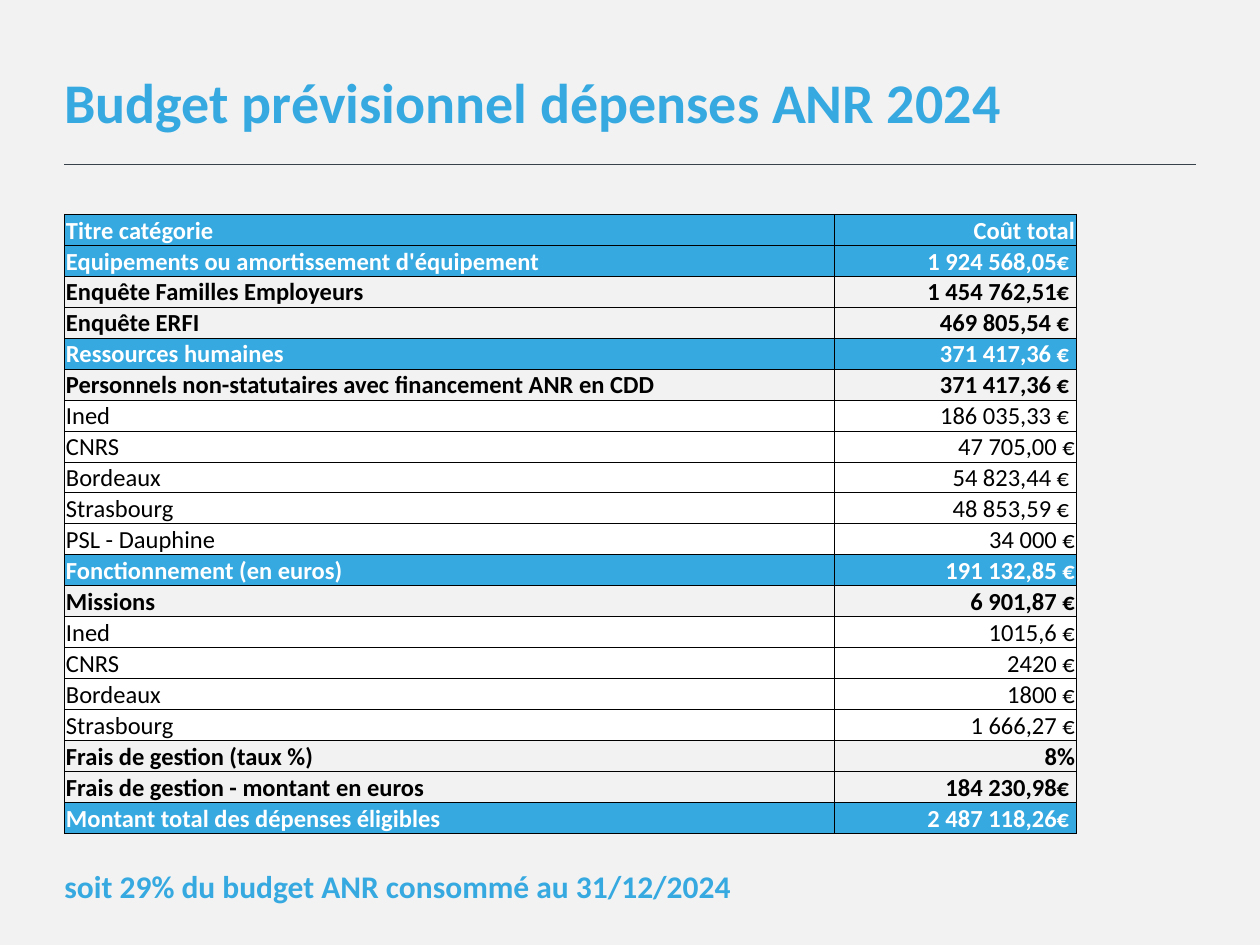
from lxml.etree import SubElement
from pptx import Presentation
from pptx.dml.color import RGBColor
from pptx.enum.shapes import MSO_CONNECTOR as Connector
from pptx.enum.text import MSO_ANCHOR as Anchor, PP_ALIGN as Align
from pptx.oxml.ns import qn
from pptx.util import Cm, Pt

COLORS = {
    "accent": "36A9E1",
    "background": "F2F2F2",
    "white": "FFFFFF",
    "black": "000000",
    "rule": "37424A",
}

LEVELS = {
    "section": {"fill": "accent", "color": "white", "bold": True},
    "subtotal": {"fill": "background", "color": "black", "bold": True},
    "detail": {"fill": "white", "color": "black", "bold": False},
}

EXPENSES = [
    ("section", "Titre catégorie", "Coût total"),
    ("section", "Equipements ou amortissement d'équipement", "1 924 568,05€ "),
    ("subtotal", "Enquête Familles Employeurs", "1 454 762,51€ "),
    ("subtotal", "Enquête ERFI", "469 805,54 € "),
    ("section", "Ressources humaines", "371 417,36 € "),
    ("subtotal", "Personnels non-statutaires avec financement ANR en CDD", "371 417,36 € "),
    ("detail", "Ined", "186 035,33 € "),
    ("detail", "CNRS", "47 705,00 €"),
    ("detail", "Bordeaux", "54 823,44 € "),
    ("detail", "Strasbourg", "48 853,59 € "),
    ("detail", "PSL - Dauphine", "34 000 €"),
    ("section", "Fonctionnement (en euros)", "191 132,85 €"),
    ("subtotal", "Missions", "6 901,87 €"),
    ("detail", "Ined", "1015,6 €"),
    ("detail", "CNRS", "2420 €"),
    ("detail", "Bordeaux", "1800 €"),
    ("detail", "Strasbourg", "1 666,27 €"),
    ("subtotal", "Frais de gestion (taux %)", "8%"),
    ("subtotal", "Frais de gestion - montant en euros", "184 230,98€ "),
    ("section", "Montant total des dépenses éligibles", "2 487 118,26€ "),
]


def rgb(name):
    """Return the named palette colour."""
    return RGBColor.from_string(COLORS[name])


def write_text(frame, text, size=14, color="black", bold=False, align=Align.LEFT):
    """Write one formatted paragraph into a text frame."""
    paragraph = frame.paragraphs[0]
    paragraph.alignment = align
    run = paragraph.add_run()
    run.text = text
    run.font.name = "Calibri"
    run.font.size = Pt(size)
    run.font.bold = bold
    run.font.color.rgb = rgb(color)


def add_heading(slide, text, left, top, width, height, size):
    """Place a bold accent line of text in the given box."""
    heading = slide.shapes.add_textbox(Cm(left), Cm(top), Cm(width), Cm(height))
    frame = heading.text_frame
    frame.word_wrap = True
    frame.vertical_anchor = Anchor.MIDDLE
    frame.margin_left = 0
    write_text(frame, text, size=size, color="accent", bold=True)


def add_rule(slide, left, top, width):
    """Draw the thin line under the title."""
    rule = slide.shapes.add_connector(
        Connector.STRAIGHT, Cm(left), Cm(top), Cm(left + width), Cm(top)
    )
    rule.line.color.rgb = rgb("rule")
    rule.line.width = Pt(0.5)
    SubElement(rule._element.spPr, qn("a:effectLst"))


def add_borders(cell):
    """Give a cell thin black lines on its four sides."""
    properties = cell._tc.get_or_add_tcPr()
    for side in ("a:lnL", "a:lnR", "a:lnT", "a:lnB"):
        border = SubElement(properties, qn(side), w=str(Pt(0.5)))
        solid = SubElement(border, qn("a:solidFill"))
        SubElement(solid, qn("a:srgbClr"), val=COLORS["black"])


def fill_cell(cell, text, fill, anchor, **text_format):
    """Write a cell and set its margins, borders and fill."""
    cell.margin_left = cell.margin_right = cell.margin_top = Cm(0.03)
    cell.margin_bottom = 0
    cell.vertical_anchor = anchor
    add_borders(cell)
    cell.fill.solid()
    cell.fill.fore_color.rgb = rgb(fill)
    write_text(cell.text_frame, text, **text_format)


def add_budget(slide, left, top, width, height):
    """Place the expense table in the given box."""
    budget = slide.shapes.add_table(
        len(EXPENSES), 2, Cm(left), Cm(top), Cm(width), Cm(height)
    ).table
    budget.first_row = budget.horz_banding = False
    cost_width = 4.88
    budget.columns[0].width = Cm(width - cost_width)
    budget.columns[1].width = Cm(cost_width)
    for index, (level, category, cost) in enumerate(EXPENSES):
        budget.rows[index].height = Cm(height / len(EXPENSES))
        anchor = Anchor.BOTTOM if index else Anchor.MIDDLE
        for column, (text, align) in enumerate([(category, Align.LEFT), (cost, Align.RIGHT)]):
            fill_cell(
                budget.cell(index, column), text, anchor=anchor, align=align, **LEVELS[level]
            )


def main():
    """Build the budget slide and save it."""
    deck = Presentation()
    deck.slide_width, deck.slide_height = Cm(25.4), Cm(19.05)
    slide = deck.slides.add_slide(deck.slide_layouts[6])
    slide.background.fill.solid()
    slide.background.fill.fore_color.rgb = rgb("background")
    left = 1.3
    add_rule(slide, left, 3.32, 22.8)
    add_heading(slide, "Budget prévisionnel dépenses ANR 2024", left, 0.76, 21, 2.56, size=32)
    add_budget(slide, left, 4.32, 20.4, 12.4)
    add_heading(
        slide, "soit 29% du budget ANR consommé au 31/12/2024", left, 17.45, 18.62, 0.82, size=18
    )
    deck.save("out.pptx")


if __name__ == "__main__":
    main()
